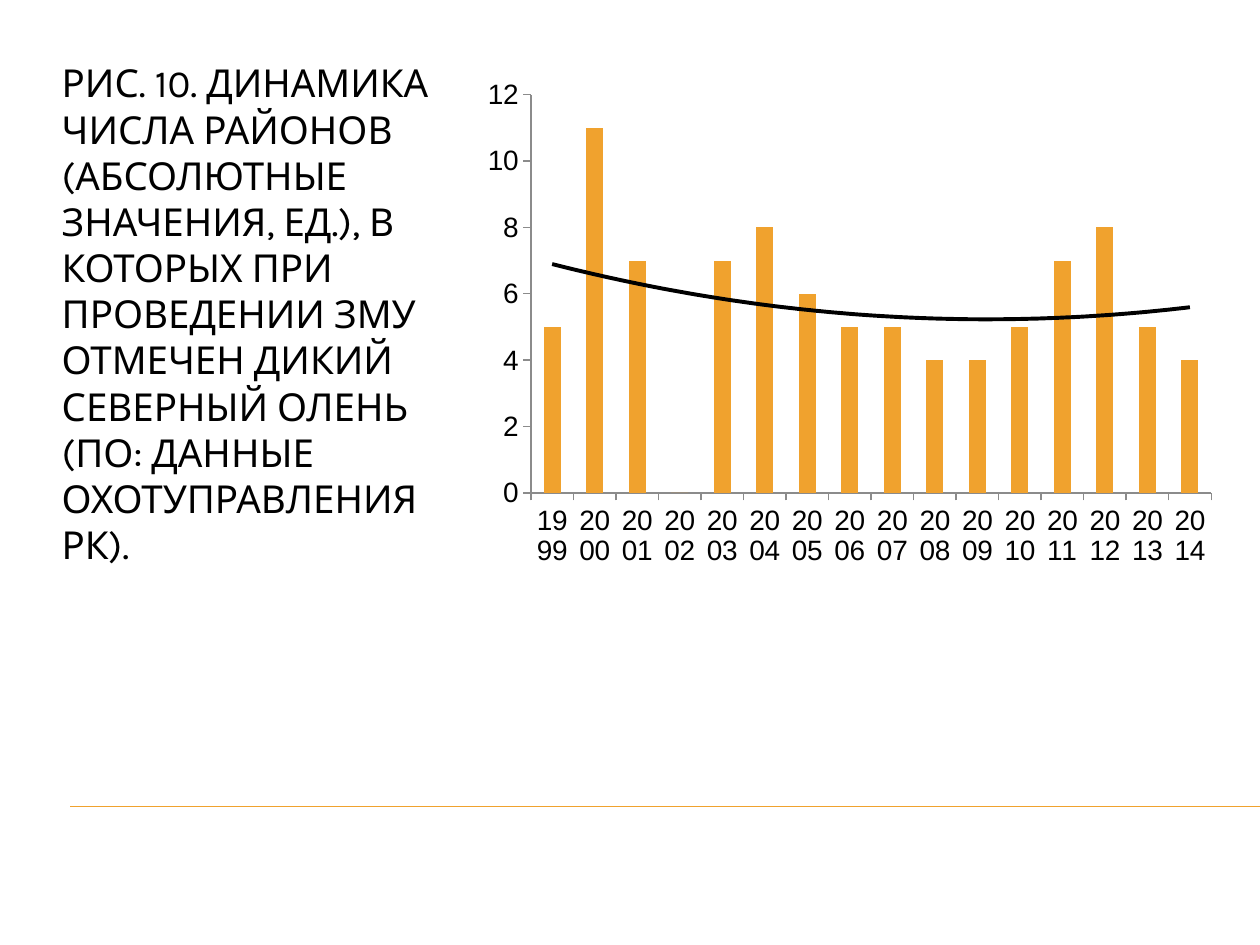
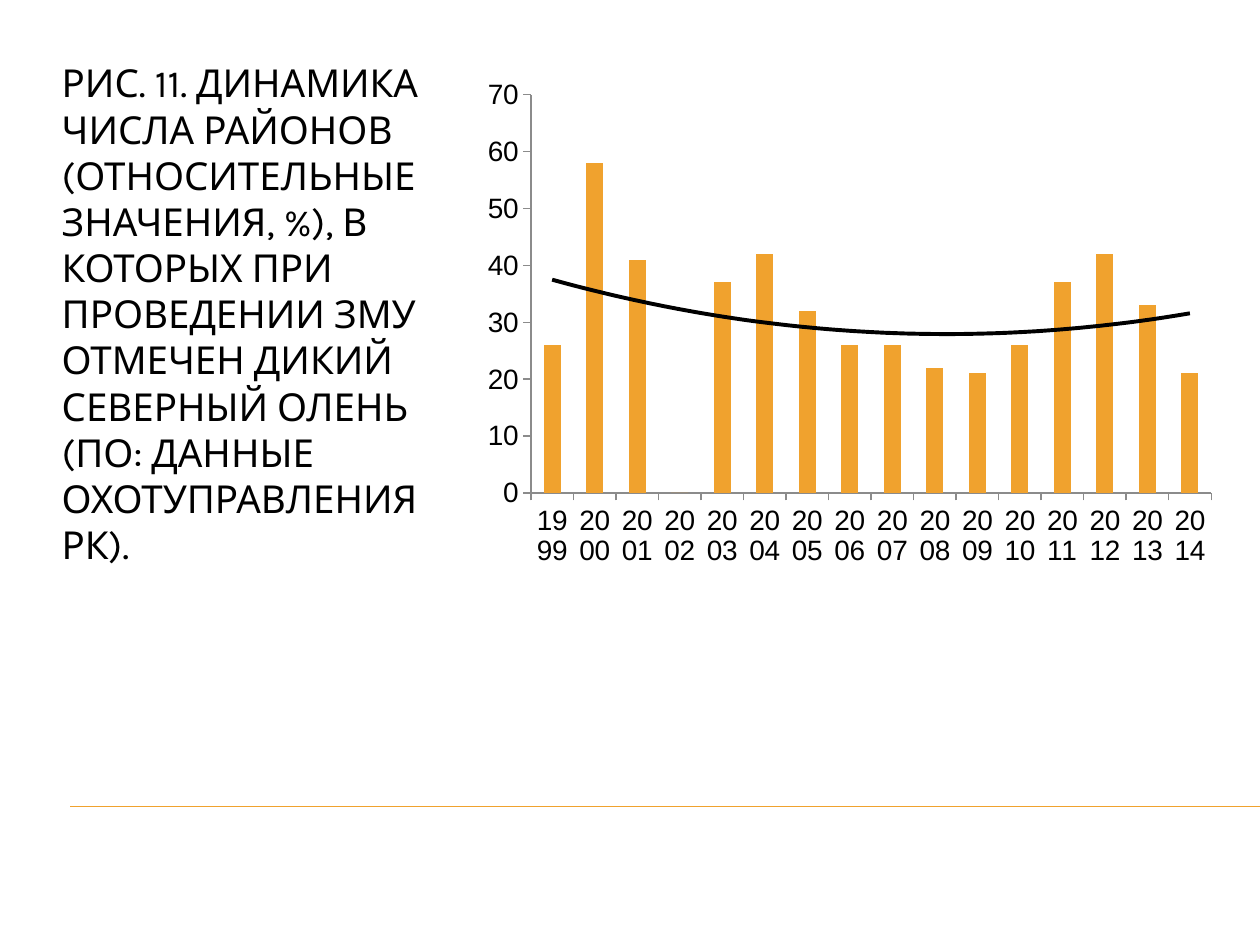
import pptx
import pptx.chart.data
import pptx.dml.color
import pptx.enum.chart
import pptx.enum.shapes
import pptx.enum.text
import pptx.oxml
import pptx.oxml.ns
import pptx.util
from lxml import etree
from pptx.util import Cm

AMBER = pptx.dml.color.RGBColor(0xF0, 0xA2, 0x2E)
BLACK = pptx.dml.color.RGBColor(0, 0, 0)
AXIS_GREY = pptx.dml.color.RGBColor(0x8B, 0x8B, 0x8B)
CAPTION_FONT = "Karla"
CHART_FONT = "Arial"

SLIDE_WIDTH, SLIDE_HEIGHT = Cm(25.4), Cm(19.05)
CAPTION_BOX = Cm(0.99), Cm(1.07), Cm(8.36), Cm(13.03)
CHART_BOX = Cm(9.53), Cm(1.4), Cm(15.19), Cm(10.21)
RULE_BOX = Cm(1.42), Cm(16.26), SLIDE_WIDTH - Cm(1.42), Cm(0)

YEARS = [str(year) for year in range(1999, 2015)]
CAPTION = (
    "РИС. {number}. ДИНАМИКА ЧИСЛА РАЙОНОВ ({measure}), В КОТОРЫХ ПРИ "
    "ПРОВЕДЕНИИ ЗМУ ОТМЕЧЕН ДИКИЙ СЕВЕРНЫЙ ОЛЕНЬ "
    "(ПО: ДАННЫЕ ОХОТУПРАВЛЕНИЯ РК)."
)
FIGURES = [
    (10, "АБСОЛЮТНЫЕ ЗНАЧЕНИЯ, ЕД.", 12, 2,
     [5, 11, 7, 0, 7, 8, 6, 5, 5, 4, 4, 5, 7, 8, 5, 4]),
    (11, "ОТНОСИТЕЛЬНЫЕ ЗНАЧЕНИЯ, %", 70, 10,
     [26, 58, 41, 0, 37, 42, 32, 26, 26, 22, 21, 26, 37, 42, 33, 21]),
]


def add_rule(slide, box):
    left, top, width, height = box
    rule = slide.shapes.add_connector(
        pptx.enum.shapes.MSO_CONNECTOR.STRAIGHT,
        left, top, left + width, top + height)
    rule.line.color.rgb = AMBER
    rule.line.width = pptx.util.Pt(0.75)
    etree.SubElement(rule._element.spPr, pptx.oxml.ns.qn("a:effectLst"))


def place_caption(slide, box, text):
    caption = slide.shapes.title
    caption.left, caption.top, caption.width, caption.height = box
    frame = caption.text_frame
    frame.text = text
    frame.word_wrap = True
    frame.auto_size = pptx.enum.text.MSO_AUTO_SIZE.NONE
    frame.vertical_anchor = pptx.enum.text.MSO_ANCHOR.TOP
    paragraph = frame.paragraphs[0]
    paragraph.alignment = pptx.enum.text.PP_ALIGN.LEFT
    paragraph.line_spacing = pptx.util.Pt(26.4)
    paragraph.font.name = CAPTION_FONT
    paragraph.font.size = pptx.util.Pt(22)
    paragraph.font.color.rgb = BLACK


def add_trend(series):
    trend = pptx.oxml.parse_xml(
        f'<c:trendline {pptx.oxml.ns.nsdecls("c", "a")}>'
        f'<c:spPr><a:ln w="{pptx.util.Pt(2.25)}"><a:solidFill>'
        f'<a:srgbClr val="{BLACK}"/></a:solidFill></a:ln></c:spPr>'
        '<c:trendlineType val="poly"/><c:order val="2"/>'
        '<c:dispRSqr val="0"/><c:dispEq val="0"/></c:trendline>')
    series._element.find(pptx.oxml.ns.qn("c:cat")).addprevious(trend)


def format_axis(axis):
    axis.has_major_gridlines = False
    axis.major_tick_mark = pptx.enum.chart.XL_TICK_MARK.OUTSIDE
    axis.format.line.color.rgb = AXIS_GREY
    font = axis.tick_labels.font
    font.name = CHART_FONT
    font.size = pptx.util.Pt(16)
    font.color.rgb = BLACK
    body = axis._element.find(".//" + pptx.oxml.ns.qn("a:bodyPr"))
    body.set("rot", "0")
    body.set("vert", "horz")


def add_district_chart(slide, box, values, maximum, step):
    data = pptx.chart.data.CategoryChartData()
    data.categories = YEARS
    data.add_series("Series 1", values)
    chart = slide.shapes.add_chart(
        pptx.enum.chart.XL_CHART_TYPE.COLUMN_CLUSTERED, *box, data).chart
    chart.has_legend = False
    chart.has_title = False

    plot = chart.plots[0]
    plot.gap_width = 150
    plot.vary_by_categories = False
    series = plot.series[0]
    series.format.fill.solid()
    series.format.fill.fore_color.rgb = AMBER
    add_trend(series)

    format_axis(chart.category_axis)
    format_axis(chart.value_axis)
    chart.value_axis.minimum_scale = 0
    chart.value_axis.maximum_scale = maximum
    chart.value_axis.major_unit = step


def add_figure_slide(presentation, number, measure, maximum, step, values):
    slide = presentation.slides.add_slide(presentation.slide_layouts[5])
    add_rule(slide, RULE_BOX)
    place_caption(slide, CAPTION_BOX,
                  CAPTION.format(number=number, measure=measure))
    add_district_chart(slide, CHART_BOX, values, maximum, step)


def main():
    presentation = pptx.Presentation()
    presentation.slide_width = SLIDE_WIDTH
    presentation.slide_height = SLIDE_HEIGHT
    for figure in FIGURES:
        add_figure_slide(presentation, *figure)
    presentation.save("out.pptx")


if __name__ == "__main__":
    main()
